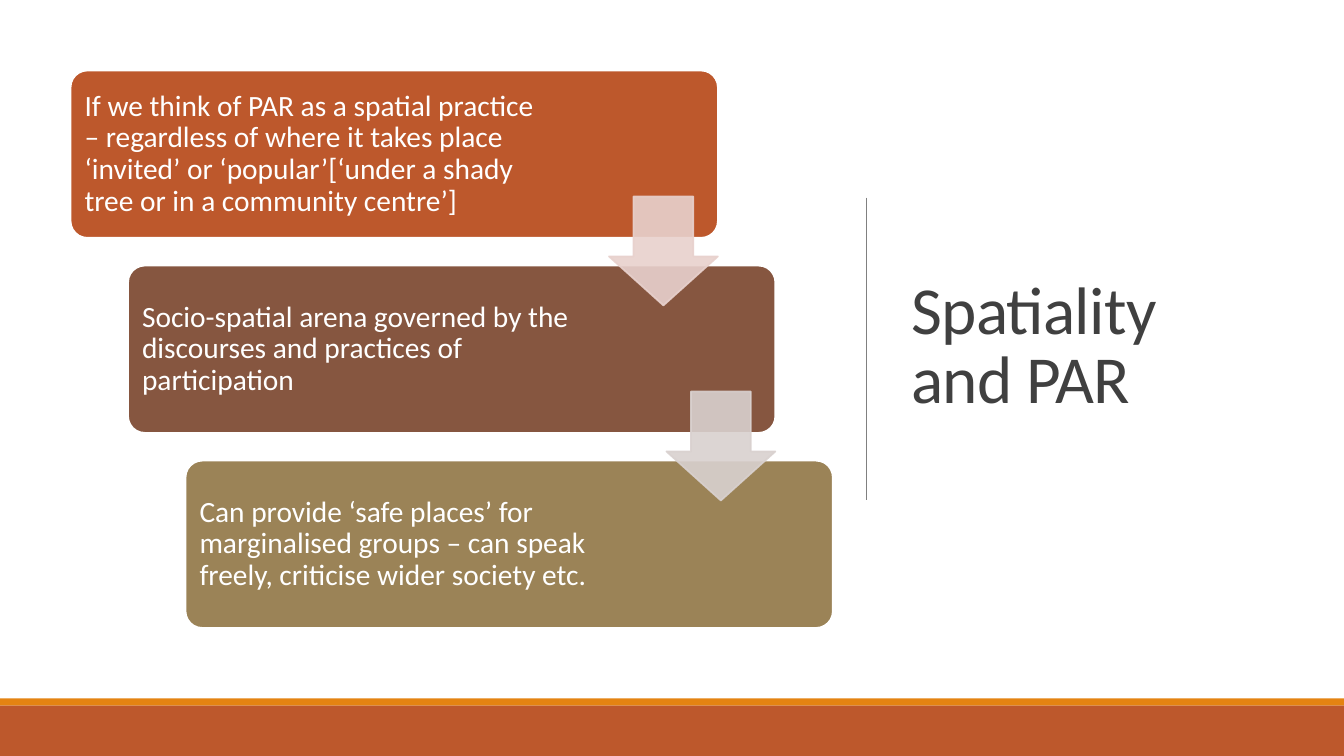
from lxml import etree
from pptx import Presentation
from pptx.dml.color import RGBColor
from pptx.enum.shapes import MSO_CONNECTOR, MSO_SHAPE
from pptx.enum.text import MSO_ANCHOR
from pptx.oxml.ns import qn
from pptx.util import Inches, Pt

RECTANGLE = MSO_SHAPE.RECTANGLE
ROUNDED = MSO_SHAPE.ROUNDED_RECTANGLE
DOWN_ARROW = MSO_SHAPE.DOWN_ARROW
STRAIGHT = MSO_CONNECTOR.STRAIGHT
MIDDLE = MSO_ANCHOR.MIDDLE

COLORS = {
    "white": "FFFFFF",
    "title": "404040",
    "divider": "808080",
    "orange": "E48312",
    "rust": "BD582C",
    "brown": "865640",
    "olive": "9B8357",
    "pink": "E8D1CD",
    "grey": "D9D1CF",
}
STEPS = [
    ("If we think of PAR as a spatial practice – regardless of where it takes place "
     "‘invited’ or ‘popular’[‘under a shady tree or in a community centre’]", "rust"),
    ("Socio-spatial arena governed by the discourses and practices of participation", "brown"),
    ("Can provide ‘safe places’ for marginalised groups – can speak freely, "
     "criticise wider society etc.", "olive"),
]
ARROW_COLORS = ["pink", "grey"]
STEP_LEFT, STEP_TOP = 0.7, 0.7
STEP_WIDTH, STEP_HEIGHT = 6.42, 1.66
SHIFT_X, SHIFT_Y = 0.57, 1.935
ARROW_LEFT, ARROW_TOP, ARROW_SIZE = 6.04, 1.95, 1.08


def rgb(name):
    """Return the named colour."""
    return RGBColor.from_string(COLORS[name])


def add_block(slide, preset, left, top, width, height, fill, outline=None):
    """Add a flat filled shape with an optional outline."""
    block = slide.shapes.add_shape(
        preset, Inches(left), Inches(top), Inches(width), Inches(height))
    block.shadow.inherit = False
    block.fill.solid()
    block.fill.fore_color.rgb = rgb(fill)
    if outline:
        block.line.color.rgb = rgb(outline)
        block.line.width = Pt(1.25)
    else:
        block.line.fill.background()
    return block


def write(frame, text, size, color, spacing):
    """Fill a frame with one wrapped, vertically centred paragraph."""
    frame.word_wrap = True
    frame.vertical_anchor = MIDDLE
    frame.text = text
    paragraph = frame.paragraphs[0]
    paragraph.line_spacing = spacing
    run = paragraph.runs[0]
    run.font.name = "Calibri"
    run.font.size = Pt(size)
    run.font.color.rgb = rgb(color)
    return paragraph, run


def add_step(slide, index, text, fill):
    """Add one step of the staircase."""
    step = add_block(slide, ROUNDED, STEP_LEFT + index * SHIFT_X, STEP_TOP + index * SHIFT_Y,
                     STEP_WIDTH, STEP_HEIGHT, fill, "white")
    step.adjustments[0] = 0.1
    frame = step.text_frame
    frame.margin_left = frame.margin_top = frame.margin_bottom = Inches(0.09)
    frame.margin_right = Inches(1.75)
    paragraph, _ = write(frame, text, 21, "white", 0.9)
    paragraph.alignment = 1


def add_step_arrow(slide, index, color):
    """Add the translucent arrow leading to the next step."""
    arrow = add_block(slide, DOWN_ARROW, ARROW_LEFT + index * SHIFT_X,
                      ARROW_TOP + index * SHIFT_Y, ARROW_SIZE, ARROW_SIZE, color, color)
    arrow.adjustments[0] = 0.55
    arrow.adjustments[1] = 0.45
    for tint in arrow._element.spPr.iter(qn("a:srgbClr")):
        etree.SubElement(tint, qn("a:alpha"), val="90000")


def add_title(slide, text):
    """Add the slide title at the right."""
    title = slide.shapes.add_textbox(Inches(8.94), Inches(0.69), Inches(3.69), Inches(5.53))
    _, run = write(title.text_frame, text, 48, "title", 0.85)
    run.font._element.set("spc", "-50")


def add_divider(slide, x, top, bottom):
    """Add the thin vertical line beside the title."""
    divider = slide.shapes.add_connector(
        STRAIGHT, Inches(x), Inches(top), Inches(x), Inches(bottom))
    divider.line.color.rgb = rgb("divider")
    divider.line.width = Pt(0.5)
    etree.SubElement(divider._element.spPr, qn("a:effectLst"))


def main():
    """Build and save the slide."""
    deck = Presentation()
    deck.slide_width, deck.slide_height = Inches(13.33), Inches(7.5)
    slide = deck.slides.add_slide(deck.slide_layouts[6])
    add_title(slide, "Spatiality and PAR")
    add_divider(slide, 8.59, 1.96, 4.96)
    add_block(slide, RECTANGLE, 0, 6.93, 13.33, 0.07, "orange")
    add_block(slide, RECTANGLE, 0, 7, 13.33, 0.5, "rust")
    for index, (text, fill) in enumerate(STEPS):
        add_step(slide, index, text, fill)
    for index, color in enumerate(ARROW_COLORS):
        add_step_arrow(slide, index, color)
    deck.save("out.pptx")


if __name__ == "__main__":
    main()
